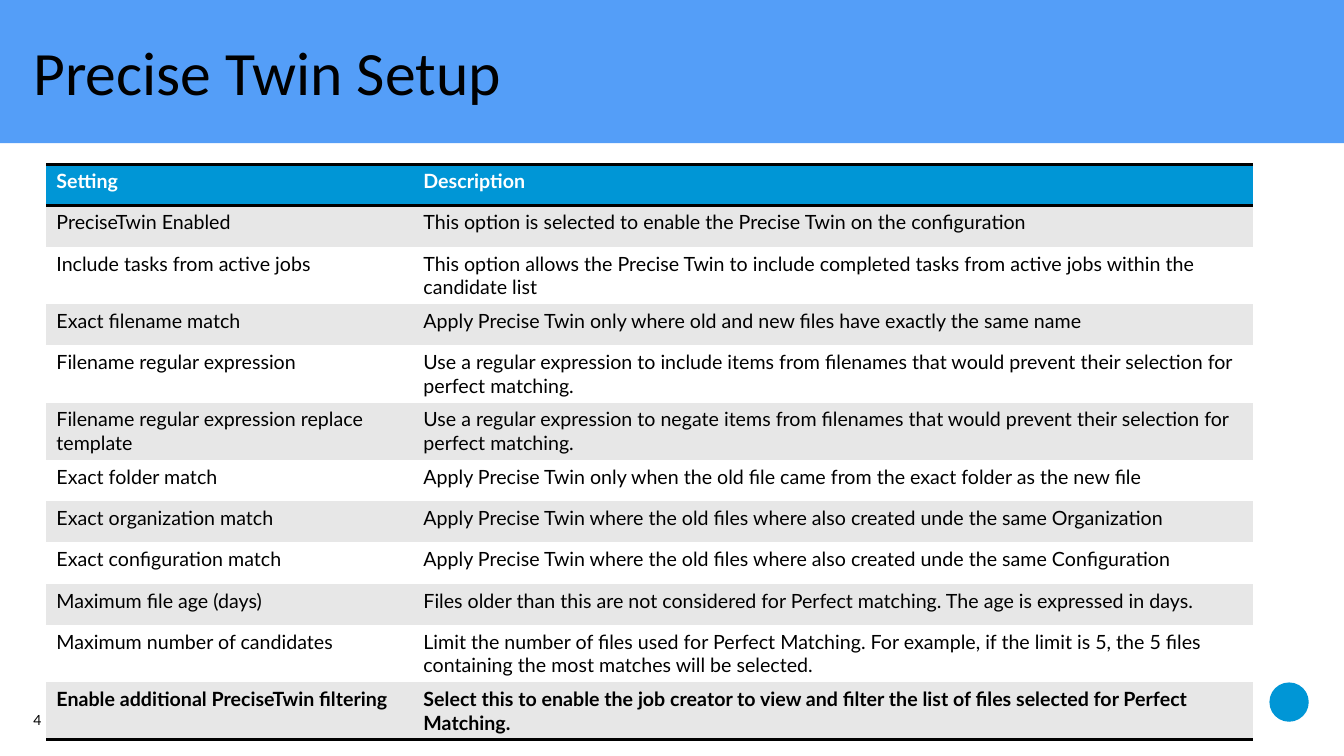
from lxml import etree
from pptx import Presentation
from pptx.dml.color import RGBColor
from pptx.enum.shapes import MSO_SHAPE
from pptx.enum.text import MSO_ANCHOR
from pptx.oxml.ns import qn
from pptx.util import Pt

RECTANGLE, OVAL = MSO_SHAPE.RECTANGLE, MSO_SHAPE.OVAL
MIDDLE = MSO_ANCHOR.MIDDLE
PX = 9144
PLAIN_TABLE_STYLE = "{2D5ABB26-0587-4C30-8999-92F81FD0307C}"
THEME = {
    "banner": RGBColor.from_string("549EF8"),
    "accent": RGBColor.from_string("0096D6"),
    "band": RGBColor.from_string("E7E7E7"),
    "white": RGBColor.from_string("FFFFFF"),
    "black": RGBColor.from_string("000000"),
    "title_font": "Calibri",
    "body_font": "Lato",
    "title_size": 44,
    "table_size": 14,
    "number_size": 10,
    "rule_width": 2,
}
SETTINGS = [
    ("Setting", "Description"),
    ("PreciseTwin Enabled",
     "This option is selected to enable the Precise Twin on the configuration"),
    ("Include tasks from active jobs",
     "This option allows the Precise Twin to include completed tasks from active jobs within the candidate list"),
    ("Exact filename match",
     "Apply Precise Twin only where old and new files have exactly the same name"),
    ("Filename regular expression",
     "Use a regular expression to include items from filenames that would prevent their selection for perfect matching."),
    ("Filename regular expression replace template",
     "Use a regular expression to negate items from filenames that would prevent their selection for perfect matching."),
    ("Exact folder match",
     "Apply Precise Twin only when the old file came from the exact folder as the new file"),
    ("Exact organization match",
     "Apply Precise Twin where the old files where also created unde the same Organization"),
    ("Exact configuration match",
     "Apply Precise Twin where the old files where also created unde the same Configuration"),
    ("Maximum file age (days)",
     "Files older than this are not considered for Perfect matching. The age is expressed in days."),
    ("Maximum number of candidates",
     "Limit the number of files used for Perfect Matching. For example, if the limit is 5, "
     "the 5 files containing the most matches will be selected."),
    ("Enable additional PreciseTwin filtering",
     "Select this to enable the job creator to view and filter the list of files selected for Perfect Matching."),
]
COLUMN_WIDTHS = (364, 833)
ROW_HEIGHT = 41


def write(text_frame, text, font_name, size, color, bold=False):
    text_frame.text = text
    font = text_frame.paragraphs[0].runs[0].font
    font.name = font_name
    font.size = Pt(size)
    font.color.rgb = color
    font.bold = bold


def add_rule(cell, side):
    line = etree.Element(qn(f"a:{side}"), w=str(Pt(THEME["rule_width"])))
    fill = etree.SubElement(line, qn("a:solidFill"))
    etree.SubElement(fill, qn("a:srgbClr"), val=str(THEME["black"]))
    cell._tc.get_or_add_tcPr().insert(0, line)


presentation = Presentation()
presentation.slide_width = 1333 * PX
presentation.slide_height = 750 * PX
slide = presentation.slides.add_slide(presentation.slide_layouts[6])

for kind, color, box in (
    (OVAL, THEME["accent"], (1259, 677, 39, 39)),
    (RECTANGLE, THEME["banner"], (0, 0, 1333, 142)),
):
    shape = slide.shapes.add_shape(kind, *(length * PX for length in box))
    shape.shadow.inherit = False
    shape.fill.solid()
    shape.fill.fore_color.rgb = color
    shape.line.fill.background()

for text, font_name, size, spacing, box in (
    ("Precise Twin Setup", THEME["title_font"], THEME["title_size"], 0.85, (33, 43, 1270, 66)),
    ("4", THEME["body_font"], THEME["number_size"], 1.0, (33, 706, 28, 17)),
):
    text_frame = slide.shapes.add_textbox(*(length * PX for length in box)).text_frame
    text_frame.word_wrap = True
    text_frame.vertical_anchor = MIDDLE
    text_frame.margin_left = text_frame.margin_right = 0
    text_frame.margin_top = text_frame.margin_bottom = 0
    write(text_frame, text, font_name, size, THEME["black"])
    text_frame.paragraphs[0].line_spacing = spacing

table = slide.shapes.add_table(
    len(SETTINGS), len(COLUMN_WIDTHS), 46 * PX, 163 * PX,
    sum(COLUMN_WIDTHS) * PX, len(SETTINGS) * ROW_HEIGHT * PX,
).table
table.first_row = True
table.horz_banding = False
table._tbl.tblPr.find(qn("a:tableStyleId")).text = PLAIN_TABLE_STYLE
for column, width in zip(table.columns, COLUMN_WIDTHS):
    column.width = width * PX

last_row = len(SETTINGS) - 1
for row_index, setting in enumerate(SETTINGS):
    is_header = row_index == 0
    if is_header:
        background = THEME["accent"]
    else:
        background = THEME["band"] if row_index % 2 else THEME["white"]
    for column_index, text in enumerate(setting):
        cell = table.cell(row_index, column_index)
        cell.fill.solid()
        cell.fill.fore_color.rgb = background
        write(cell.text_frame, text, THEME["body_font"], THEME["table_size"],
              THEME["white"] if is_header else THEME["black"],
              row_index in (0, last_row))
        if row_index in (0, last_row):
            add_rule(cell, "lnB")
        if is_header:
            add_rule(cell, "lnT")

presentation.save("out.pptx")
